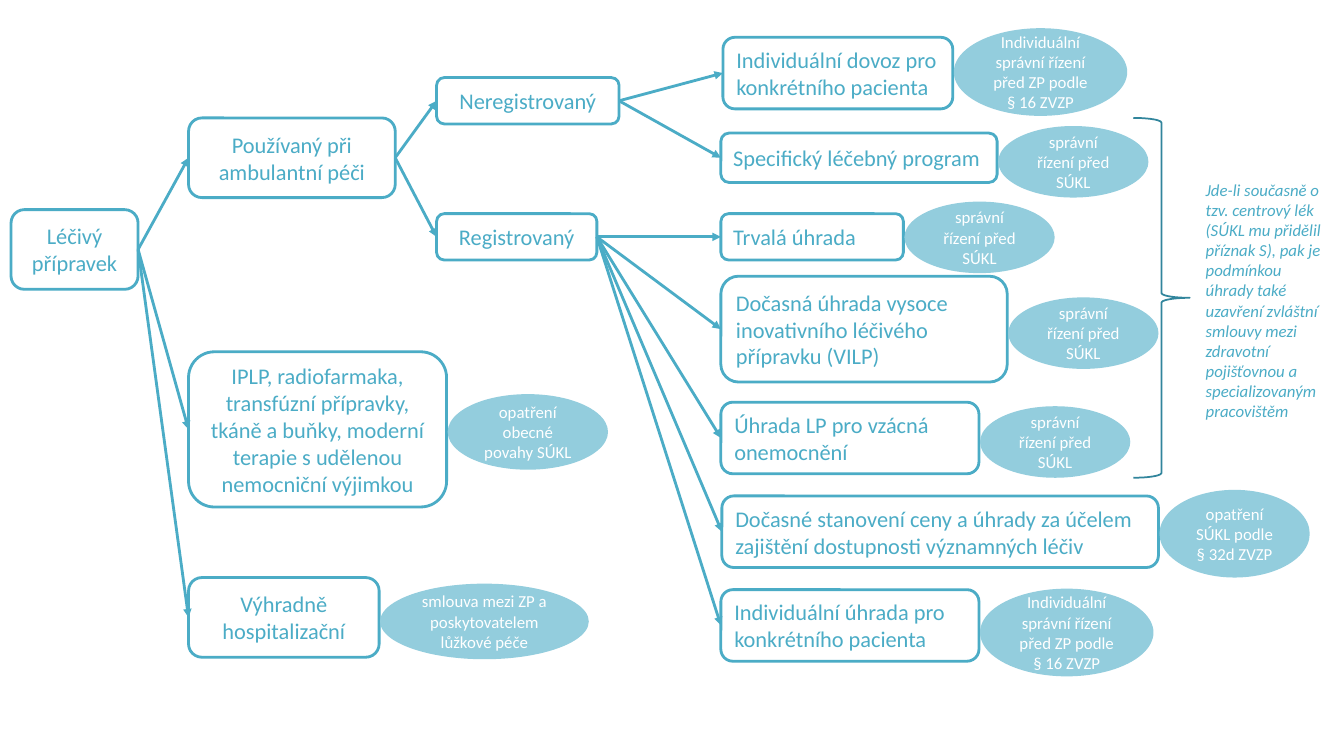
"""Build the decision tree of reimbursement routes for medicinal products."""
from dataclasses import dataclass

from lxml.etree import SubElement
from pptx import Presentation
from pptx.dml.color import RGBColor
from pptx.enum.shapes import MSO_CONNECTOR, MSO_SHAPE
from pptx.enum.text import MSO_ANCHOR, PP_ALIGN
from pptx.oxml.ns import qn
from pptx.util import Inches, Pt


@dataclass(frozen=True)
class Theme:
    """Colours, type sizes and line widths of the slide."""
    font: str = "Calibri"
    accent: RGBColor = RGBColor(0x4B, 0xAC, 0xC6)
    pale: RGBColor = RGBColor(0x93, 0xCD, 0xDD)
    dark: RGBColor = RGBColor(0x31, 0x85, 0x9C)
    white: RGBColor = RGBColor(0xFF, 0xFF, 0xFF)
    step_size: Pt = Pt(16)
    small_size: Pt = Pt(12)
    step_line: Pt = Pt(2)
    brace_line: Pt = Pt(1.25)


THEME = Theme()
TOP, LEFT, BOTTOM, RIGHT = range(4)
PROCEDURE_GAP = 0.01

SUKL_PROCEEDING = "správní řízení před SÚKL"
INDIVIDUAL_PROCEEDING = "Individuální správní řízení před ZP podle § 16 ZVZP"

CATEGORIES = {
    "product": ("Léčivý přípravek", 0.11, 2.08, 1.26, 0.79),
    "outpatient": ("Používaný při ambulantní péči", 1.87, 1.17, 2.05, 0.79),
    "special": ("IPLP, radiofarmaka, transfúzní přípravky, tkáně a buňky, moderní "
                "terapie s udělenou nemocniční výjimkou", 1.87, 3.49, 2.56, 1.54),
    "hospital": ("Výhradně hospitalizační", 1.87, 5.73, 1.89, 0.79),
    "unregistered": ("Neregistrovaný", 4.33, 0.77, 1.81, 0.46),
    "registered": ("Registrovaný", 4.33, 2.12, 1.59, 0.46),
}

ROUTES = {
    "import": ("Individuální dovoz pro konkrétního pacienta", 7.17, 0.37, 2.28, 0.71),
    "programme": ("Specifický léčebný program", 7.15, 1.32, 2.74, 0.49),
    "permanent": ("Trvalá úhrada", 7.15, 2.12, 1.81, 0.46),
    "innovative": ("Dočasná úhrada vysoce inovativního léčivého přípravku (VILP)",
                   7.15, 2.74, 2.84, 1.05),
    "rare": ("Úhrada LP pro vzácná onemocnění", 7.15, 3.99, 2.56, 0.71),
    "availability": ("Dočasné stanovení ceny a úhrady za účelem zajištění "
                     "dostupnosti významných léčiv", 7.16, 4.92, 4.33, 0.71),
    "individual": ("Individuální úhrada pro konkrétního pacienta", 7.15, 5.85, 2.56, 0.71),
}

BRANCHES = {
    "product": ("outpatient", "special", "hospital"),
    "outpatient": ("unregistered", "registered"),
    "unregistered": ("import", "programme"),
    "registered": ("permanent", "innovative", "rare", "availability", "individual"),
}

PROCEDURES = {
    "import": (INDIVIDUAL_PROCEEDING, 0.28, 1.72, 0.87),
    "programme": (SUKL_PROCEEDING, 1.25, 1.49, 0.71),
    "permanent": (SUKL_PROCEEDING, 2, 1.49, 0.71),
    "innovative": (SUKL_PROCEEDING, 2.95, 1.49, 0.71),
    "rare": (SUKL_PROCEEDING, 4.03, 1.49, 0.71),
    "availability": ("opatření SÚKL podle § 32d ZVZP", 4.86, 1.49, 0.87),
    "individual": (INDIVIDUAL_PROCEEDING, 5.84, 1.72, 0.87),
    "special": ("opatření obecné povahy SÚKL", 3.91, 1.59, 0.75),
    "hospital": ("smlouva mezi ZP a poskytovatelem lůžkové péče", 5.79, 2.07, 0.75),
}

CENTRE_DRUG_NOTE = (
    "Jde-li současně o tzv. centrový lék (SÚKL mu přidělil příznak S), pak je "
    "podmínkou úhrady také uzavření zvláštní smlouvy mezi zdravotní pojišťovnou "
    "a specializovaným pracovištěm"
)


def write_text(shape, text, size, color, align, italic=False):
    """Put one wrapped paragraph into a shape."""
    frame = shape.text_frame
    frame.word_wrap = True
    paragraph = frame.paragraphs[0]
    paragraph.text = text
    paragraph.alignment = align
    font = paragraph.font
    font.name, font.size, font.italic = THEME.font, size, italic
    font.color.rgb = color


def add_step(slide, text, left, top, width, height, align):
    """Add an outlined rounded box of the tree."""
    step = slide.shapes.add_shape(MSO_SHAPE.ROUNDED_RECTANGLE, Inches(left),
                                  Inches(top), Inches(width), Inches(height))
    step.shadow.inherit = False
    step.fill.solid()
    step.fill.fore_color.rgb = THEME.white
    step.line.color.rgb = THEME.accent
    step.line.width = THEME.step_line
    step.text_frame.vertical_anchor = MSO_ANCHOR.MIDDLE
    write_text(step, text, THEME.step_size, THEME.accent, align)
    return step


def add_arrow(slide, parent, child):
    """Join the right side of one step to the left side of another."""
    arrow = slide.shapes.add_connector(MSO_CONNECTOR.STRAIGHT, 0, 0, 0, 0)
    arrow.begin_connect(parent, RIGHT)
    arrow.end_connect(child, LEFT)
    arrow.line.color.rgb = THEME.accent
    arrow.line.width = THEME.step_line
    SubElement(arrow.line._get_or_add_ln(), qn("a:tailEnd"), type="triangle")
    SubElement(arrow._element.spPr, qn("a:effectLst"))


def add_procedure(slide, step, text, top, width, height):
    """Add the ellipse naming the procedure to the right of its step."""
    left = step.left + step.width + Inches(PROCEDURE_GAP)
    procedure = slide.shapes.add_shape(MSO_SHAPE.OVAL, left, Inches(top),
                                       Inches(width), Inches(height))
    procedure.shadow.inherit = False
    procedure.fill.solid()
    procedure.fill.fore_color.rgb = THEME.pale
    procedure.line.fill.background()
    procedure.text_frame.vertical_anchor = MSO_ANCHOR.MIDDLE
    write_text(procedure, text, THEME.small_size, THEME.white, PP_ALIGN.CENTER)


def add_brace(slide, left, top, width, height):
    """Add the brace that gathers the routes covered by the note."""
    brace = slide.shapes.add_shape(MSO_SHAPE.RIGHT_BRACE, Inches(left), Inches(top),
                                   Inches(width), Inches(height))
    brace.shadow.inherit = False
    brace.fill.background()
    brace.line.color.rgb = THEME.dark
    brace.line.width = THEME.brace_line


def add_note(slide, text, left, top, width, height):
    """Add the italic note beside the brace."""
    note = slide.shapes.add_textbox(Inches(left), Inches(top), Inches(width), Inches(height))
    write_text(note, text, THEME.small_size, THEME.accent, PP_ALIGN.LEFT, italic=True)


def main():
    """Build and save the slide."""
    deck = Presentation()
    deck.slide_width, deck.slide_height = Inches(13.33), Inches(7.5)
    slide = deck.slides.add_slide(deck.slide_layouts[6])

    steps = {}
    for group, align in ((CATEGORIES, PP_ALIGN.CENTER), (ROUTES, PP_ALIGN.LEFT)):
        for key, step in group.items():
            steps[key] = add_step(slide, *step, align)
    for parent, children in BRANCHES.items():
        for child in children:
            add_arrow(slide, steps[parent], steps[child])
    for key, procedure in PROCEDURES.items():
        add_procedure(slide, steps[key], *procedure)

    add_note(slide, CENTRE_DRUG_NOTE, 11.86, 1.73, 1.4, 2.52)
    add_brace(slide, 11.24, 1.17, 0.56, 3.57)
    deck.save("out.pptx")


if __name__ == "__main__":
    main()
